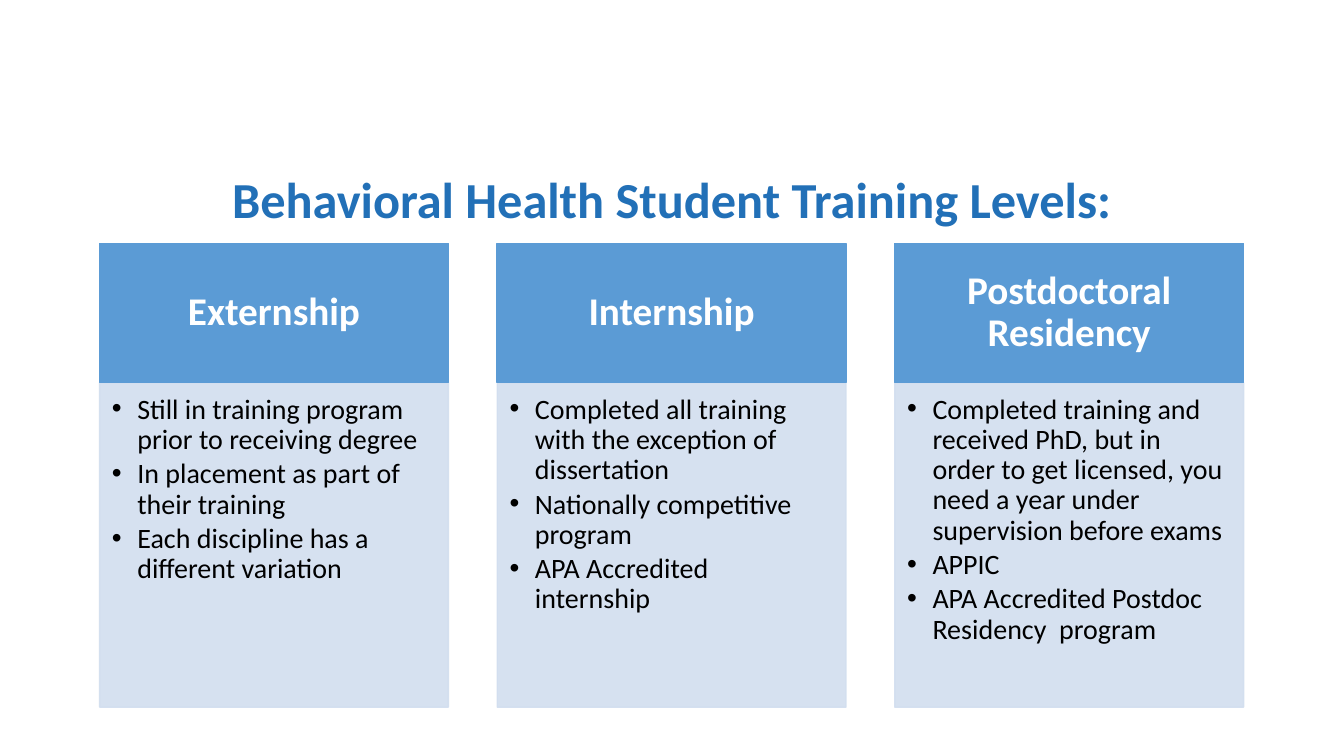
from lxml import etree
from pptx import Presentation
from pptx.dml.color import RGBColor
from pptx.enum.shapes import MSO_SHAPE
from pptx.enum.text import MSO_ANCHOR, MSO_AUTO_SIZE, PP_ALIGN
from pptx.oxml.ns import qn
from pptx.util import Cm, Pt

RECT = MSO_SHAPE.RECTANGLE
TOP, MIDDLE = MSO_ANCHOR.TOP, MSO_ANCHOR.MIDDLE
LEFT, CENTER = PP_ALIGN.LEFT, PP_ALIGN.CENTER
NO_FIT = MSO_AUTO_SIZE.NONE

NAVY = RGBColor(0x22, 0x70, 0xB7)
BLUE = RGBColor(0x5B, 0x9B, 0xD5)
PALE = RGBColor(0xD2, 0xDE, 0xEF)
WHITE = RGBColor(0xFF, 0xFF, 0xFF)
BLACK = RGBColor(0x00, 0x00, 0x00)

# Column grid, in centimetres
START, STEP, WIDTH = 2.51, 10.02, 8.79
HEAD_TOP, HEAD_HIGH = 6.13, 3.51
BODY_TOP, BODY_HIGH = HEAD_TOP + HEAD_HIGH, 8.18

LEVELS = [
    ("Externship", [
        "Still in training program prior to receiving degree",
        "In placement as part of their training",
        "Each discipline has a different variation",
    ]),
    ("Internship", [
        "Completed all training with the exception of dissertation",
        "Nationally competitive program",
        "APA Accredited internship",
    ]),
    ("Postdoctoral Residency", [
        "Completed training and received PhD, but in order to get licensed, "
        "you need a year under supervision before exams",
        "APPIC",
        "APA Accredited Postdoc Residency  program",
    ]),
]


class Deck:
    """Holds the style and the current slide."""

    font = "Calibri"
    spacing = 0.9

    def __init__(self, slide):
        self.slide = slide

    def place(self, shape, left, top, width, height):
        shape.left, shape.top = Cm(left), Cm(top)
        shape.width, shape.height = Cm(width), Cm(height)

    def paint(self, shape, color, alpha=None):
        shape.fill.solid()
        shape.fill.fore_color.rgb = color
        shape.line.color.rgb = color
        shape.line.width = Pt(1)
        if alpha:
            for tint in shape._element.spPr.iter(qn("a:srgbClr")):
                etree.SubElement(tint, qn("a:alpha"), val=str(alpha * 1000))

    def frame(self, shape, anchor, insets):
        box = shape.text_frame
        box.word_wrap = True
        box.auto_size = NO_FIT
        box.vertical_anchor = anchor
        (box.margin_left, box.margin_top,
         box.margin_right, box.margin_bottom) = map(Cm, insets)
        return box

    def style(self, para, size, color, bold=False, align=CENTER, after=0):
        para.alignment = align
        para.line_spacing = self.spacing
        para.space_before, para.space_after = Pt(0), Pt(after)
        font = para.font
        font.name, font.size, font.bold = self.font, Pt(size), bold
        font.color.rgb = color

    def bullet(self, para):
        props = para._p.get_or_add_pPr()
        props.set("marL", str(Cm(0.64)))
        props.set("indent", str(-Cm(0.64)))
        etree.SubElement(props, qn("a:buFont"), typeface="Arial")
        etree.SubElement(props, qn("a:buChar"), char="•")

    def title(self, text):
        shape = self.slide.shapes.title
        self.place(shape, 2.33, 4.29, 29.21, 2.1)
        box = self.frame(shape, TOP, (0.25, 0.13, 0.25, 0.13))
        box.text = text
        self.style(box.paragraphs[0], 36, NAVY, bold=True)

    def head(self, text, left):
        shape = self.slide.shapes.add_shape(
            RECT, Cm(left), Cm(HEAD_TOP), Cm(WIDTH), Cm(HEAD_HIGH))
        shape.shadow.inherit = False
        self.paint(shape, BLUE)
        box = self.frame(shape, MIDDLE, (0.55, 0.31, 0.55, 0.31))
        box.text = text
        self.style(box.paragraphs[0], 28, WHITE, bold=True)

    def list(self, shape, items, left):
        self.place(shape, left, BODY_TOP, WIDTH, BODY_HIGH)
        self.paint(shape, PALE, alpha=90)
        box = self.frame(shape, TOP, (0.31, 0.31, 0.41, 0.43))
        box.text = "\n".join(items)
        for para in box.paragraphs:
            self.bullet(para)
            self.style(para, 20, BLACK, align=LEFT, after=3)


def main():
    prs = Presentation()
    prs.slide_width, prs.slide_height = Cm(33.87), Cm(19.05)
    slide = prs.slides.add_slide(prs.slide_layouts.get_by_name("Comparison"))
    deck = Deck(slide)

    # Title
    deck.title("Behavioral Health Student Training Levels:")

    # One column per training level
    bodies = [p for p in slide.placeholders if 1 <= p.placeholder_format.idx <= 4]
    for col, (name, items) in enumerate(LEVELS):
        left = START + col * STEP
        deck.head(name, left)
        deck.list(bodies[col], items, left)

    # Unused placeholders
    for spare in bodies[len(LEVELS):]:
        spare._element.getparent().remove(spare._element)

    prs.save("out.pptx")


if __name__ == "__main__":
    main()
